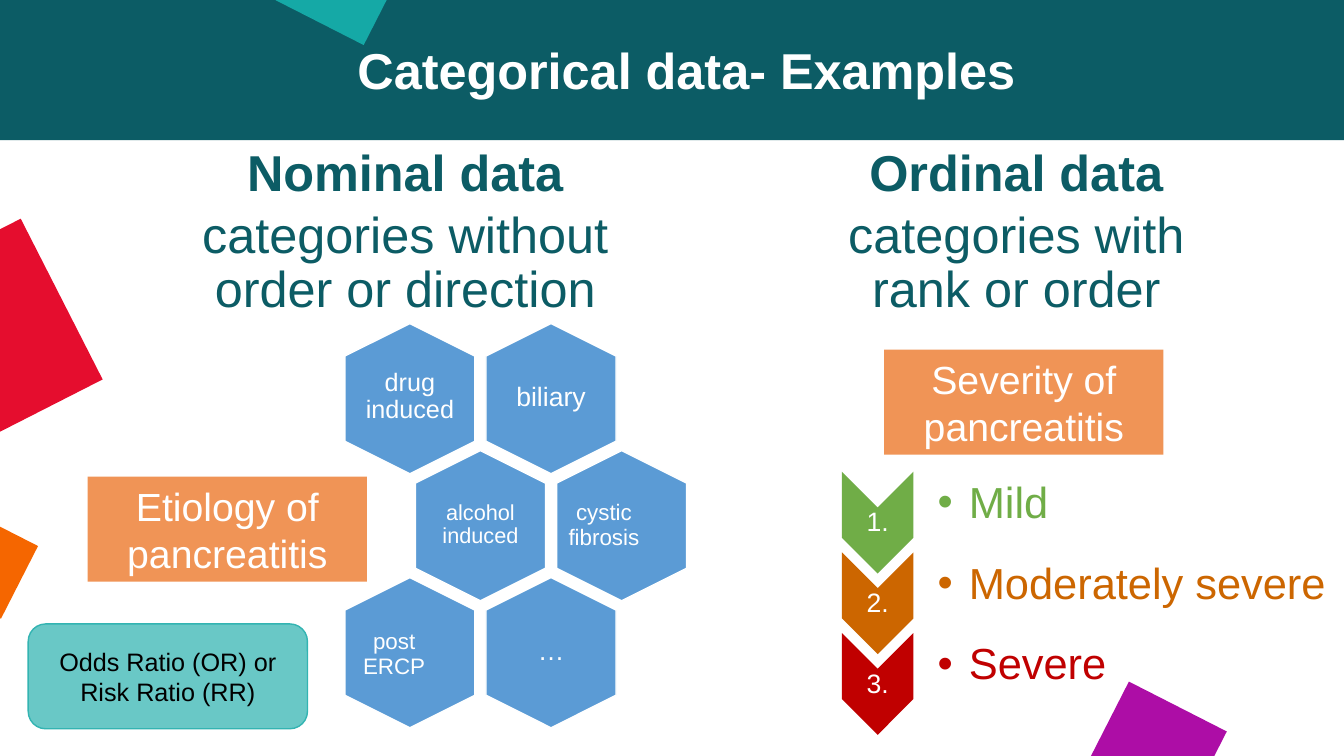
from lxml import etree
from pptx import Presentation
from pptx.dml.color import RGBColor
from pptx.enum.shapes import MSO_SHAPE
from pptx.enum.text import MSO_ANCHOR, PP_ALIGN
from pptx.oxml.ns import qn
from pptx.util import Emu, Pt

PX = 9144  # EMU per px, 100 px to the inch
FONT = "Arial"

WHITE = RGBColor(0xFF, 0xFF, 0xFF)
BLACK = RGBColor(0, 0, 0)
PETROL = RGBColor(0x0C, 0x5C, 0x65)
RED = RGBColor(0xE5, 0x0D, 0x2E)
PURPLE = RGBColor(0xAD, 0x0D, 0xA6)
ORANGE = RGBColor(0xF5, 0x66, 0x00)
TEAL = RGBColor(0x15, 0xA9, 0xA6)
BLUE = RGBColor(0x5B, 0x9B, 0xD5)
APRICOT = RGBColor(0xF0, 0x94, 0x56)
MINT = RGBColor(0x69, 0xC8, 0xC6)
MINT_EDGE = RGBColor(0x33, 0xB4, 0xB2)
GREEN = RGBColor(0x70, 0xAD, 0x47)
OCHRE = RGBColor(0xCC, 0x66, 0x00)
DARK_RED = RGBColor(0xC0, 0, 0)

RECT = MSO_SHAPE.RECTANGLE
ROUNDED = MSO_SHAPE.ROUNDED_RECTANGLE
HEXAGON = MSO_SHAPE.HEXAGON
CHEVRON = MSO_SHAPE.CHEVRON
TOP, MIDDLE = MSO_ANCHOR.TOP, MSO_ANCHOR.MIDDLE
LEFT, CENTER = PP_ALIGN.LEFT, PP_ALIGN.CENTER

HEX_W, HEX_H = 149, 129
HEX_LEFT, HEX_TOP = 332, 331
HEX_STEP_X, HEX_STEP_Y = 140, 126

DECORATIONS = [
    ((-109, 248, 180, 179), 333, RED),
    ((1089, 695, 109, 109), 27, PURPLE),
    ((-61, 518, 85, 81), 27, ORANGE),
    ((291, -73, 98, 101), 27, TEAL),
]
HEADINGS = [
    ((87, 142, 530, 159), "Nominal data", "categories without order or direction"),
    ((682, 142, 552, 159), "Ordinal data", "categories with rank or order"),
]
ETIOLOGIES = [  # text, box, inset, size
    ("drug induced", (354, 365, 105, 58), 7, 18),
    ("biliary", (502, 344, 89, 102), 8, 19),
    ("alcohol induced", (432, 470, 89, 102), 4, 15.5),
    ("cystic fibrosis", (545, 492, 108, 59), 5, 16),
    ("post ERCP", (351, 627, 80, 45), 5, 16),
    ("…", (502, 596, 89, 102), 8, 19),
]
SEVERITIES = [("Mild", GREEN), ("Moderately severe", OCHRE), ("Severe", DARK_RED)]


def emu(box):
    return [Emu(v * PX) for v in box]


def add_box(slide, kind, box, fill, line=None, rotation=0):
    sp = slide.shapes.add_shape(kind, *emu(box))
    sp.shadow.inherit = False
    sp.rotation = rotation
    sp.fill.solid()
    sp.fill.fore_color.rgb = fill
    if line is None:
        sp.line.fill.background()
    else:
        sp.line.color.rgb = line
        sp.line.width = Pt(1)
    return sp


def add_paragraph(tf, text, size, color, bold=False, align=CENTER, spacing=0.9):
    """Fill the empty first paragraph, or append a further one."""
    p = tf.paragraphs[0]
    if p.runs:
        p = tf.add_paragraph()
        p.space_before = Pt(5)
    p.alignment = align
    p.line_spacing = spacing
    r = p.add_run()
    r.text = text
    r.font.name = FONT
    r.font.size = Pt(size)
    r.font.bold = bold
    r.font.color.rgb = color
    return p


def add_text_frame(slide, box, insets=(10, 5, 10, 5), anchor=TOP):
    tf = slide.shapes.add_textbox(*emu(box)).text_frame
    tf.word_wrap = True
    tf.vertical_anchor = anchor
    tf.margin_left, tf.margin_top, tf.margin_right, tf.margin_bottom = emu(insets)
    return tf


def indent(p, left, first=0):
    p_pr = p._p.get_or_add_pPr()
    p_pr.set("marL", str(left * PX))
    p_pr.set("indent", str(first * PX))
    return p_pr


def add_bullet(p):
    p_pr = indent(p, 31, -31)
    etree.SubElement(p_pr, qn("a:buFont")).set("typeface", FONT)
    etree.SubElement(p_pr, qn("a:buChar")).set("char", "•")


def add_heading(slide, box, title, explanation):
    tf = add_text_frame(slide, box)
    for text, bold in ((title, True), (explanation, False)):
        indent(add_paragraph(tf, text, 36, PETROL, bold), 100)


def add_caption(slide, kind, box, text, size, color, fill, line=None):
    tf = add_box(slide, kind, box, fill, line).text_frame
    tf.word_wrap = True
    tf.vertical_anchor = MIDDLE
    add_paragraph(tf, text, size, color, spacing=1.0)


def add_etiologies(slide):
    """Honeycomb of three rows of two, the middle row shifted by half a step."""
    for i, (text, box, inset, size) in enumerate(ETIOLOGIES):
        row, col = divmod(i, 2)
        x = HEX_LEFT + col * HEX_STEP_X + row % 2 * HEX_STEP_X // 2
        y = HEX_TOP + row * HEX_STEP_Y
        sp = add_box(slide, HEXAGON, (x, y, HEX_W, HEX_H), BLUE, WHITE, 90)
        sp.adjustments[0] = 0.25
        tf = add_text_frame(slide, box, (inset,) * 4, MIDDLE)
        add_paragraph(tf, text, size, WHITE)


def add_severities(slide):
    for i, (text, color) in enumerate(SEVERITIES):
        y = 483 + i * 80
        add_box(slide, CHEVRON, (820, y, 101, 71), color, rotation=90)
        tf = add_text_frame(slide, (835, y + 21, 71, 30), (1,) * 4, MIDDLE)
        add_paragraph(tf, f"{i + 1}.", 19, WHITE)
        tf = add_text_frame(slide, (906, y - 12, 420, 59), (24, 2, 2, 2), MIDDLE)
        add_bullet(add_paragraph(tf, text, 31, color, align=LEFT))


def main():
    prs = Presentation()
    prs.slide_width, prs.slide_height = emu((1333, 750))
    slide = prs.slides.add_slide(prs.slide_layouts[6])

    add_box(slide, RECT, (0, 0, 1333, 139), PETROL)
    for box, rotation, color in DECORATIONS:
        add_box(slide, RECT, box, color, rotation=rotation)
    title = add_text_frame(slide, (203, 41, 956, 81))
    add_paragraph(title, "Categorical data- Examples", 36, WHITE, True)
    for heading in HEADINGS:
        add_heading(slide, *heading)

    add_etiologies(slide)
    add_caption(slide, RECT, (87, 473, 277, 104), "Etiology of pancreatitis",
                28, WHITE, APRICOT)
    add_caption(slide, RECT, (877, 347, 277, 104), "Severity of pancreatitis",
                28, WHITE, APRICOT)
    add_severities(slide)
    add_caption(slide, ROUNDED, (28, 619, 277, 104),
                "Odds Ratio (OR) or Risk Ratio (RR)", 18, BLACK, MINT, MINT_EDGE)

    prs.save("out.pptx")


if __name__ == "__main__":
    main()
